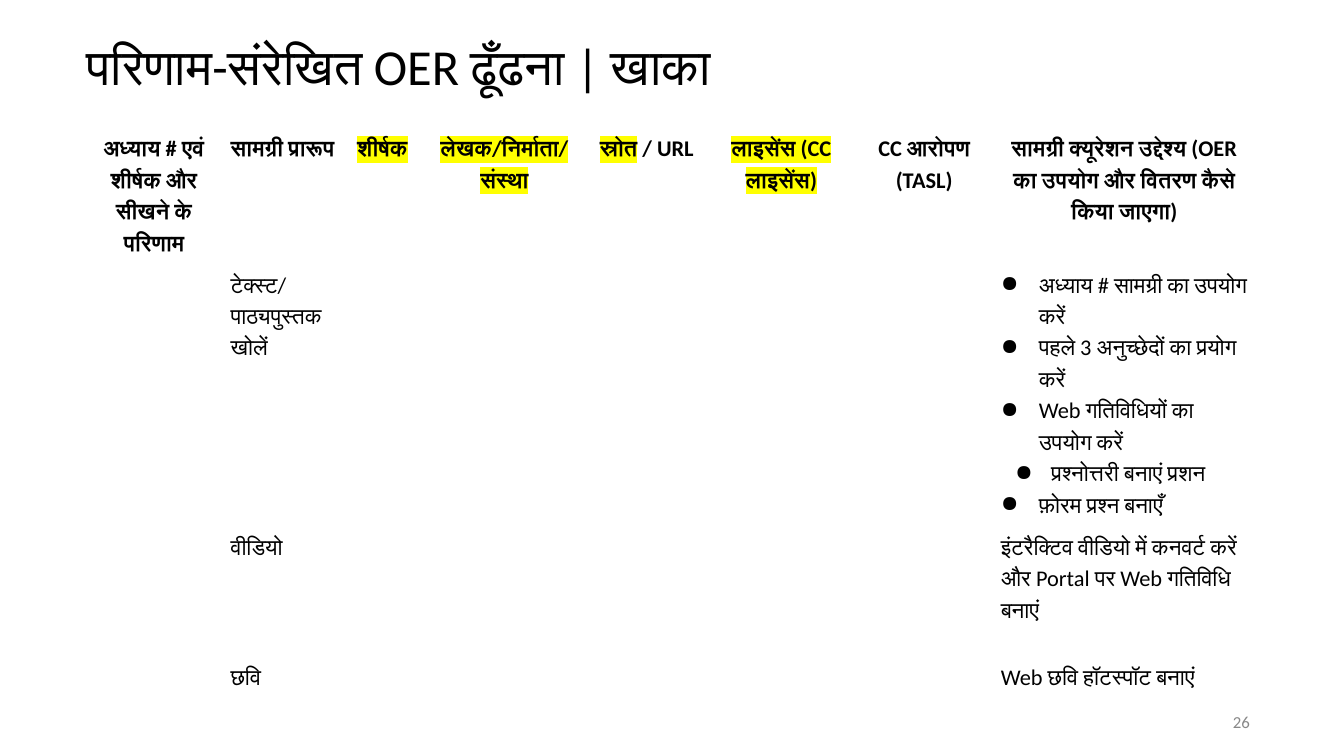
from lxml import etree
from pptx import Presentation, util as u
from pptx.dml.color import RGBColor
from pptx.enum import text
from pptx.oxml.ns import qn

COLORS = {"ink": "000000", "grey": "888888", "mark": "FFFF00"}
FONT = "Calibri"
NO_GRID_STYLE = "{2D5ABB26-0587-4C30-8999-92F81FD0307C}"
CENTER, LEFT, RIGHT = (text.PP_ALIGN.CENTER, text.PP_ALIGN.LEFT,
                       text.PP_ALIGN.RIGHT)

COLUMNS = [3.6, 2.88, 2.15, 4.0, 3.18, 3.6, 3.6, 6.48]
ROWS = [3.43, 6.15, 3.28, 1.83]

# Each header is a list of paragraphs, each a list of (words, highlighted).
HEADERS = [
    [[("अध्याय # एवं शीर्षक और", False)], [("सीखने के परिणाम", False)]],
    [[("सामग्री प्रारूप", False)]],
    [[("शीर्षक", True)]],
    [[("लेखक/निर्माता/संस्था", True)]],
    [[("स्रोत", True), (" / URL", False)]],
    [[("लाइसेंस (CC लाइसेंस)", True)]],
    [[("CC आरोपण (TASL)", False)]],
    [[("सामग्री क्यूरेशन उद्देश्य (OER का उपयोग और वितरण कैसे किया जाएगा)", False)]],
]
FORMATS = ["टेक्स्ट/पाठ्यपुस्तक खोलें", "वीडियो", "छवि"]
# Bulleted uses with the left indent and the hanging indent in cm.
TEXTBOOK_USES = [
    ("अध्याय # सामग्री का उपयोग करें", 0.96, 0.96),
    ("पहले 3 अनुच्छेदों का प्रयोग करें", 0.96, 0.96),
    ("Web गतिविधियों का उपयोग करें", 0.96, 0.96),
    ("प्रश्नोत्तरी बनाएं प्रशन", 1.27, 0.91),
    ("फ़ोरम प्रश्न बनाएँ", 0.96, 0.96),
]
VIDEO_USE = "इंटरैक्टिव वीडियो में कनवर्ट करें और Portal पर Web गतिविधि बनाएं"
IMAGE_USE = "Web छवि हॉटस्पॉट बनाएं"


class Deck:
    def __init__(self, width, height):
        self.prs = Presentation()
        self.prs.slide_width, self.prs.slide_height = u.Cm(width), u.Cm(height)
        self.s = self.prs.slides.add_slide(self.prs.slide_layouts[5])

    def run(self, p, words, size, color="ink", bold=False, marked=False):
        r = p.add_run()
        r.text = words
        f = r.font
        f.name, f.size, f.bold = FONT, u.Pt(size), bold
        f.color.rgb = RGBColor.from_string(COLORS[color])
        rPr = r._r.get_or_add_rPr()
        etree.SubElement(rPr, qn("a:cs"), typeface=FONT)
        if marked:
            hl = etree.Element(qn("a:highlight"))
            etree.SubElement(hl, qn("a:srgbClr"), val=COLORS["mark"])
            rPr.find(qn("a:solidFill")).addnext(hl)

    def place(self, sp, left, top, width, height, anchor):
        sp.left, sp.top = u.Cm(left), u.Cm(top)
        sp.width, sp.height = u.Cm(width), u.Cm(height)
        tf = sp.text_frame
        tf.word_wrap, tf.vertical_anchor = True, anchor
        tf.auto_size = text.MSO_AUTO_SIZE.NONE
        return tf.paragraphs[0]

    def title(self, words, *box):
        p = self.place(self.s.shapes.title, *box, text.MSO_ANCHOR.TOP)
        p.alignment, p.line_spacing = LEFT, 0.9
        self.run(p, words, 36)

    def page_number(self, number, *box):
        sp = self.s.shapes.add_textbox(0, 0, 0, 0)
        p = self.place(sp, *box, text.MSO_ANCHOR.MIDDLE)
        p.alignment = RIGHT
        self.run(p, number, 12, "grey")

    def table(self, left, top, columns, rows):
        frame = self.s.shapes.add_table(
            len(rows), len(columns), u.Cm(left), u.Cm(top),
            u.Cm(sum(columns)), u.Cm(sum(rows)))
        table = frame.table
        table.first_row = table.horz_banding = False
        table._tbl.tblPr.find(qn("a:tableStyleId")).text = NO_GRID_STYLE
        for column, width in zip(table.columns, columns):
            column.width = u.Cm(width)
        for row, height in zip(table.rows, rows):
            row.height = u.Cm(height)
        for cell in table.iter_cells():
            cell.fill.background()
            cell.margin_left = cell.margin_right = u.Cm(0.13)
            cell.margin_top = cell.margin_bottom = u.Cm(0.13)
        return table

    def cell_paragraph(self, cell, align=LEFT):
        """Return the cell's empty first paragraph, or a new one after its text."""
        tf = cell.text_frame
        p = tf.add_paragraph() if tf.text else tf.paragraphs[0]
        p.alignment, p.line_spacing = align, 1.15
        return p

    def header(self, cell, paragraphs):
        for runs in paragraphs:
            p = self.cell_paragraph(cell, CENTER)
            for words, marked in runs:
                self.run(p, words, 16, bold=True, marked=marked)

    def entry(self, cell, words):
        self.run(self.cell_paragraph(cell), words, 16)

    def bullet(self, cell, words, indent, hanging):
        p = self.cell_paragraph(cell)
        pPr = p._p.get_or_add_pPr()
        pPr.set("marL", str(u.Cm(indent)))
        pPr.set("indent", str(-u.Cm(hanging)))
        color = etree.SubElement(pPr, qn("a:buClr"))
        etree.SubElement(color, qn("a:srgbClr"), val=COLORS["ink"])
        etree.SubElement(pPr, qn("a:buChar"), char="●")
        self.run(p, words, 16)


def main():
    deck = Deck(33.87, 19.05)
    deck.title("परिणाम-संरेखित OER ढूँढना | खाका", 1.93, 0.94, 29.24, 2.21)
    deck.page_number("26", 23.93, 17.7, 7.82, 0.97)

    table = deck.table(2.08, 3.18, COLUMNS, ROWS)
    for col, paragraphs in enumerate(HEADERS):
        deck.header(table.cell(0, col), paragraphs)
    for row, words in enumerate(FORMATS, 1):
        deck.entry(table.cell(row, 1), words)
    for use in TEXTBOOK_USES:
        deck.bullet(table.cell(1, 7), *use)
    deck.entry(table.cell(2, 7), VIDEO_USE)
    deck.entry(table.cell(3, 7), IMAGE_USE)
    deck.prs.save("out.pptx")


if __name__ == "__main__":
    main()
